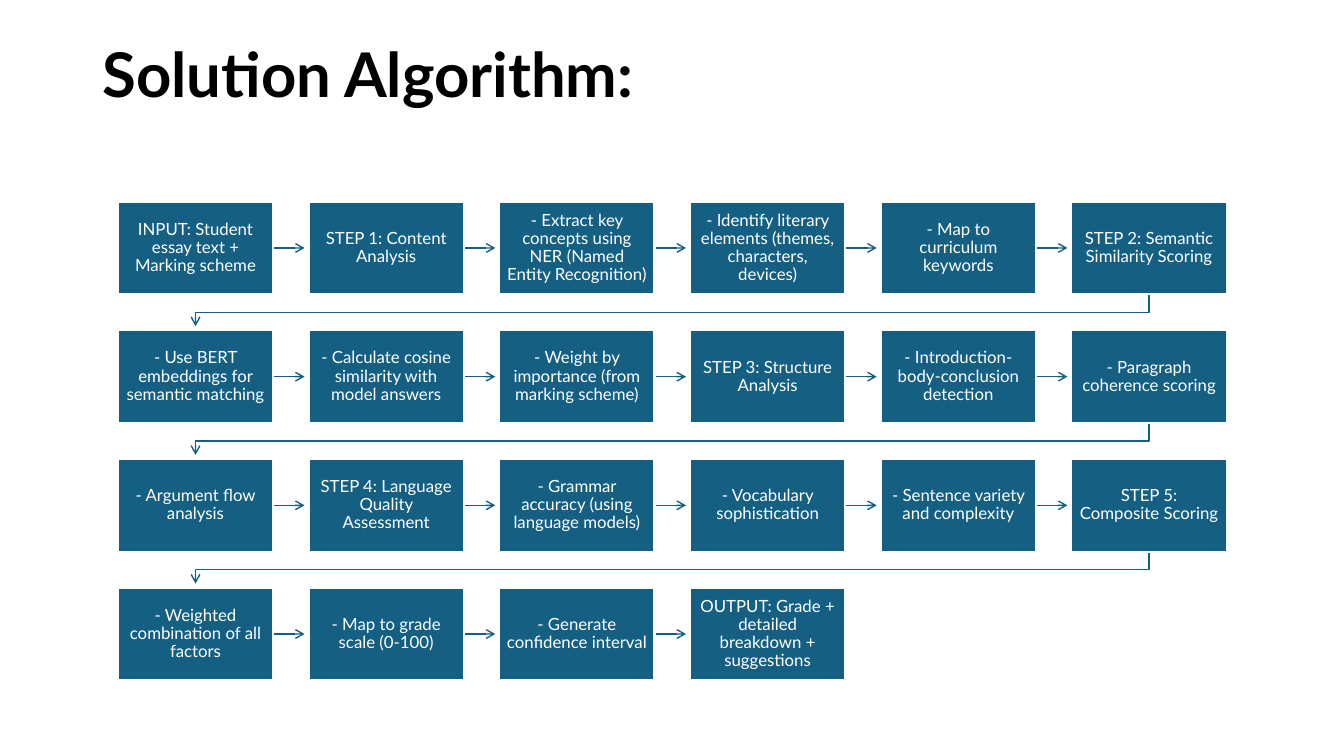
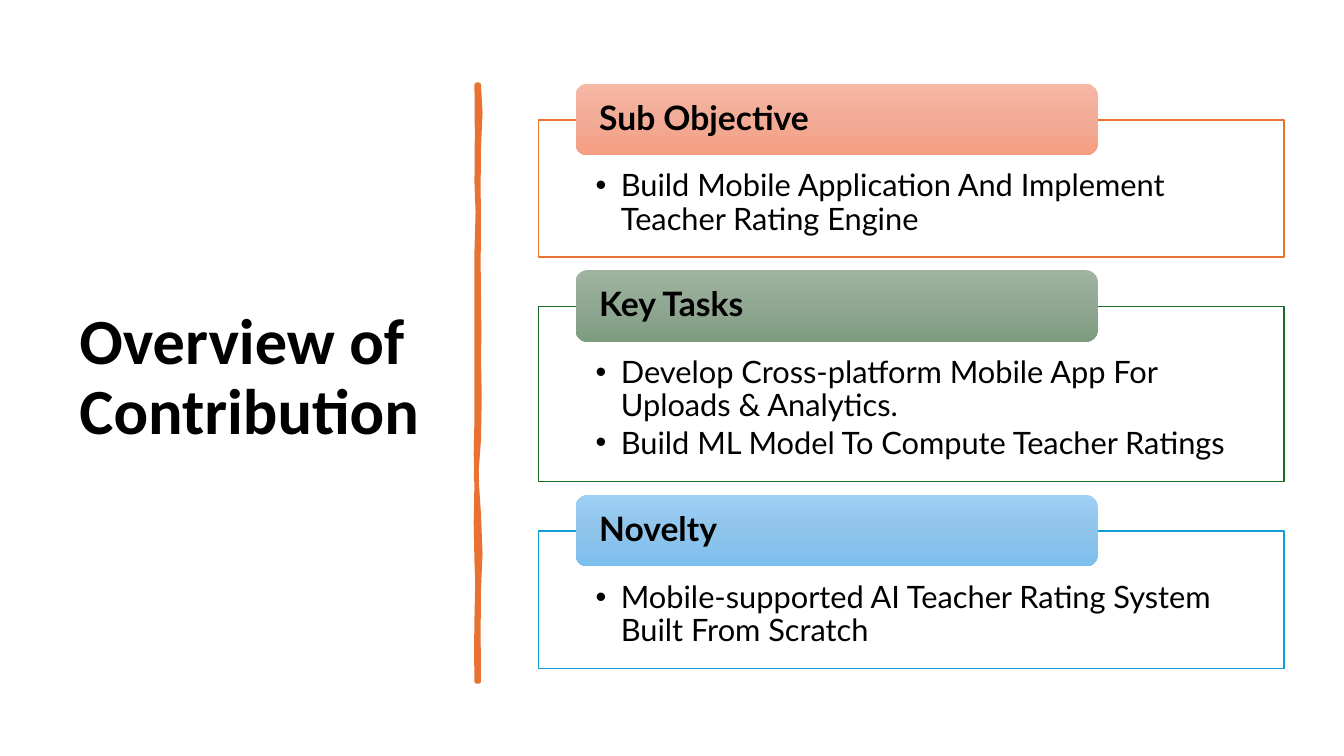
import pptx
import pptx.dml.color
import pptx.enum.shapes
import pptx.enum.text
import pptx.oxml.ns
import pptx.util
import copy
from lxml import etree

Inches = pptx.util.Inches
Pt = pptx.util.Pt
RGBColor = pptx.dml.color.RGBColor
Shape = pptx.enum.shapes.MSO_SHAPE
Align = pptx.enum.text.PP_ALIGN
Anchor = pptx.enum.text.MSO_ANCHOR
qn = pptx.oxml.ns.qn

BLACK = RGBColor(0x00, 0x00, 0x00)
WHITE = RGBColor(0xFF, 0xFF, 0xFF)
TEAL = RGBColor(0x15, 0x60, 0x82)
ORANGE = RGBColor(0xE9, 0x71, 0x32)
GREEN = RGBColor(0x19, 0x6B, 0x24)
BLUE = RGBColor(0x0F, 0x9E, 0xD5)
PEACH_BLEND = [RGBColor.from_string(c) for c in ("F5B8A5", "F2AB96", "F59E82")]
SAGE_BLEND = [RGBColor.from_string(c) for c in ("9EB49F", "91A892", "7D9C7E")]
SKY_BLEND = [RGBColor.from_string(c) for c in ("9ECFF5", "90C4EB", "7CBEED")]

BODY_FONT = "Lato"

STEPS = [
    "INPUT: Student essay text + Marking scheme",
    "STEP 1: Content Analysis",
    "- Extract key concepts using NER (Named Entity Recognition)",
    "- Identify literary elements (themes, characters, devices)",
    "- Map to curriculum keywords",
    "STEP 2: Semantic Similarity Scoring",
    "- Use BERT embeddings for semantic matching",
    "- Calculate cosine similarity with model answers",
    "- Weight by importance (from marking scheme)",
    "STEP 3: Structure Analysis",
    "- Introduction-body-conclusion detection",
    "- Paragraph coherence scoring",
    "- Argument flow analysis",
    "STEP 4: Language Quality Assessment",
    "- Grammar accuracy (using language models)",
    "- Vocabulary sophistication",
    "- Sentence variety and complexity",
    "STEP 5: Composite Scoring",
    "- Weighted combination of all factors",
    "- Map to grade scale (0-100)",
    "- Generate confidence interval",
    "OUTPUT: Grade + detailed breakdown + suggestions",
]
COLUMNS = 6
STEP_LEFT, STEP_TOP = 1.17, 2.0
STEP_WIDTH, STEP_HEIGHT = 1.54, 0.92
STEP_TEXT_WIDTH = 1.39
STEP_INSET = (STEP_WIDTH - STEP_TEXT_WIDTH) / 2
COLUMN_PITCH = (10.63 - STEP_LEFT) / (COLUMNS - 1)
ROW_PITCH = (5.83 - STEP_TOP) / 3
ARROW_GAP = 0.04

SECTIONS = [
    # heading, bullets, frame top, frame height, frame colour, heading blend
    ("Sub Objective", ["Build Mobile Application And Implement Teacher Rating Engine"],
     1.19, 1.36, ORANGE, PEACH_BLEND),
    ("Key Tasks", ["Develop Cross-platform Mobile App For Uploads & Analytics.",
                   "Build ML Model To Compute Teacher Ratings"],
     3.04, 1.74, GREEN, SAGE_BLEND),
    ("Novelty", ["Mobile-supported AI Teacher Rating System Built From Scratch"],
     5.27, 1.36, BLUE, SKY_BLEND),
]

# Brush stroke: a start point, then two control points and an end for each curve.
STROKE_START = (4.75, 0.84)
STROKE_CURVES = [
    ((4.77, 1.02), (4.77, 1.19), (4.75, 1.46)),
    ((4.73, 1.73), (4.76, 1.95), (4.75, 2.26)),
    ((4.74, 2.57), (4.75, 2.62), (4.75, 2.94)),
    ((4.74, 3.25), (4.77, 3.42), (4.75, 3.56)),
    ((4.73, 3.70), (4.79, 4.14), (4.75, 4.36)),
    ((4.71, 4.57), (4.72, 4.84), (4.75, 5.10)),
    ((4.77, 5.36), (4.77, 5.64), (4.75, 5.84)),
    ((4.73, 6.03), (4.76, 6.50), (4.75, 6.76)),
    ((4.74, 6.76), (4.73, 6.76), (4.73, 6.76)),
    ((4.74, 6.46), (4.71, 6.44), (4.73, 6.13)),
    ((4.74, 5.83), (4.74, 5.70), (4.73, 5.57)),
    ((4.72, 5.44), (4.72, 4.95), (4.73, 4.77)),
    ((4.73, 4.59), (4.71, 4.45), (4.73, 4.15)),
    ((4.74, 3.86), (4.72, 3.73), (4.73, 3.35)),
    ((4.74, 2.98), (4.72, 2.81), (4.73, 2.50)),
    ((4.74, 2.18), (4.75, 2.00), (4.73, 1.81)),
    ((4.70, 1.63), (4.77, 1.04), (4.73, 0.84)),
]


def write_text(box, lines, size, color=BLACK, font=BODY_FONT, bold=False, align=Align.LEFT,
               anchor=Anchor.MIDDLE, insets=(0.1, 0.05, 0.1, 0.05), bullet=None, gap=0):
    frame = box.text_frame
    frame.word_wrap = True
    frame.vertical_anchor = anchor
    (frame.margin_left, frame.margin_top,
     frame.margin_right, frame.margin_bottom) = map(Inches, insets)
    for index, line in enumerate(lines):
        para = frame.add_paragraph() if index else frame.paragraphs[0]
        para.alignment = align
        para.line_spacing = 0.9
        if index:
            para.space_before = Pt(gap)
        if bullet:
            add_bullet(para, bullet)
        span = para.add_run()
        span.text = line
        span.font.name = font
        span.font.size = Pt(size)
        span.font.bold = bold
        span.font.color.rgb = color


def add_bullet(para, symbol, indent=0.25):
    properties = para._p.get_or_add_pPr()
    properties.set("marL", str(Inches(indent)))
    properties.set("indent", str(-Inches(indent)))
    etree.SubElement(properties, qn("a:buFont")).set("typeface", "Arial")
    etree.SubElement(properties, qn("a:buChar")).set("char", symbol)


def add_title(page, text, left, top, width, height, **style):
    box = page.shapes.add_textbox(*map(Inches, (left, top, width, height)))
    write_text(box, [text], bold=True, **style)


def add_box(page, kind, left, top, width, height, fill=None, line=None, weight=1):
    box = page.shapes.add_shape(kind, *map(Inches, (left, top, width, height)))
    box.shadow.inherit = False
    if fill is not None:
        box.fill.solid()
        box.fill.fore_color.rgb = fill
    if line is None:
        box.line.fill.background()
    else:
        box.line.color.rgb = line
        box.line.width = Pt(weight)
    return box


def blend_down(box, colors):
    """Fill the box from top to bottom with three evenly spaced colours."""
    box.fill.gradient()
    box.fill.gradient_angle = 270
    stop_list = box._element.spPr.find(".//" + qn("a:gsLst"))
    stop_list.insert(1, copy.deepcopy(stop_list[0]))
    for stop, color, position in zip(box.fill.gradient_stops, colors, (0, 0.5, 1)):
        stop.color.rgb = color
        stop.position = position


def style_arrow(arrow):
    arrow.line.color.rgb = TEAL
    arrow.line.width = Pt(1)
    etree.SubElement(arrow.line._get_or_add_ln(), qn("a:tailEnd")).set("type", "arrow")


def add_arrow(page, left, right, y):
    arrow = page.shapes.add_connector(pptx.enum.shapes.MSO_CONNECTOR.STRAIGHT,
                                      *map(Inches, (left, y, right, y)))
    style_arrow(arrow)
    etree.SubElement(arrow._element.spPr, qn("a:effectLst"))


def add_outline(page, points, close):
    start, *rest = [(Inches(x), Inches(y)) for x, y in points]
    builder = page.shapes.build_freeform(*start)
    builder.add_line_segments(rest, close=close)
    outline = builder.convert_to_shape()
    outline.shadow.inherit = False
    return outline


def add_return_arrow(page, right, left, top, bottom):
    """Lead from the end of one row to the start of the next."""
    middle = top + 0.18
    arrow = add_outline(page, [(right, top), (right, middle), (left, middle), (left, bottom)],
                        close=False)
    arrow.fill.background()
    style_arrow(arrow)


def add_step(page, index, text, is_last):
    row, column = divmod(index, COLUMNS)
    left = STEP_LEFT + column * COLUMN_PITCH
    top = STEP_TOP + row * ROW_PITCH
    if not is_last:
        if column < COLUMNS - 1:
            add_arrow(page, left + STEP_WIDTH, left + COLUMN_PITCH - ARROW_GAP,
                      top + STEP_HEIGHT / 2)
        else:
            add_return_arrow(page, left + STEP_WIDTH / 2, STEP_LEFT + STEP_WIDTH / 2,
                             top + STEP_HEIGHT, top + ROW_PITCH - ARROW_GAP)
    box = add_box(page, Shape.RECTANGLE, left, top, STEP_WIDTH, STEP_HEIGHT,
                  fill=TEAL, line=WHITE, weight=1.5)
    write_text(box, [text], size=12, color=WHITE, align=Align.CENTER, insets=[STEP_INSET] * 4)


def add_section(page, heading, bullets, top, height, color, blend):
    frame = add_box(page, Shape.RECTANGLE, 5.34, top, 7.4, height, fill=WHITE, line=color)
    write_text(frame, bullets, size=22, anchor=Anchor.TOP,
               insets=(0.57, 0.5, 0.57, 0.17), bullet="•", gap=3)
    label = add_box(page, Shape.ROUNDED_RECTANGLE, 5.71, top - 0.36, 5.18, 0.71)
    blend_down(label, blend)
    write_text(label, [heading], size=24, bold=True, insets=(0.2, 0, 0.2, 0))


def curve_points(start, curves, pieces=2):
    """Return points along a chain of cubic curves."""
    points = [start]
    for first, second, end in curves:
        origin = points[-1]
        for piece in range(1, pieces + 1):
            t = piece / pieces
            weights = ((1 - t) ** 3, 3 * t * (1 - t) ** 2, 3 * t * t * (1 - t), t ** 3)
            points.append(tuple(
                sum(weight * value for weight, value in zip(weights, axis))
                for axis in zip(origin, first, second, end)))
    return points


def add_brush_stroke(page):
    stroke = add_outline(page, curve_points(STROKE_START, STROKE_CURVES), close=True)
    stroke.fill.solid()
    stroke.fill.fore_color.rgb = ORANGE
    stroke.line.color.rgb = ORANGE
    stroke.line.width = Pt(3.25)
    etree.SubElement(stroke.line._get_or_add_ln(), qn("a:round"))


def build_algorithm(page):
    add_title(page, "Solution Algorithm:", 0.92, 0.37, 11.5, 0.79, size=44)
    for index, text in enumerate(STEPS):
        add_step(page, index, text, is_last=index == len(STEPS) - 1)


def build_overview(page):
    add_title(page, "Overview of Contribution", 0.69, 0.7, 3.74, 6.11, size=46, font="Calibri")
    add_brush_stroke(page)
    for section in SECTIONS:
        add_section(page, *section)


def main():
    deck = pptx.Presentation()
    deck.slide_width = Inches(40 / 3)
    deck.slide_height = Inches(7.5)
    for build in (build_algorithm, build_overview):
        build(deck.slides.add_slide(deck.slide_layouts[6]))
    deck.save("out.pptx")


if __name__ == "__main__":
    main()
